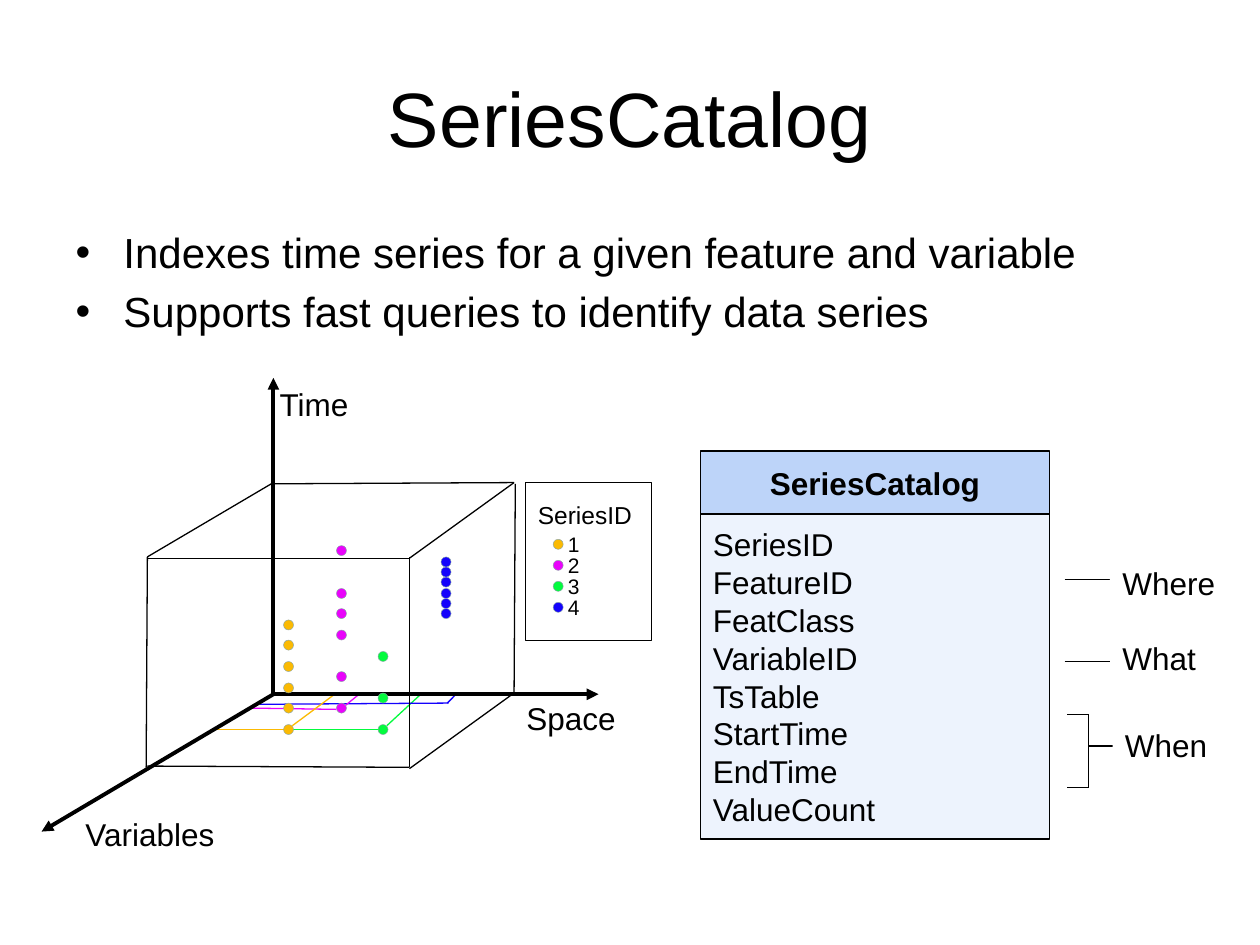
"""Build the SeriesCatalog slide: data cube, series legend and catalog table outline."""
from lxml import etree
from pptx import Presentation
from pptx.dml.color import RGBColor
from pptx.enum.shapes import MSO_CONNECTOR, MSO_SHAPE
from pptx.enum.text import MSO_ANCHOR, MSO_AUTO_SIZE, PP_ALIGN
from pptx.oxml.ns import qn
from pptx.util import Inches, Pt

STRAIGHT = MSO_CONNECTOR.STRAIGHT
OVAL, RECTANGLE, PROCESS = MSO_SHAPE.OVAL, MSO_SHAPE.RECTANGLE, MSO_SHAPE.FLOWCHART_PROCESS
TOP, MIDDLE = MSO_ANCHOR.TOP, MSO_ANCHOR.MIDDLE
LEFT, CENTER = PP_ALIGN.LEFT, PP_ALIGN.CENTER
COLORS = {
    "black": "000000", "white": "FFFFFF", "header": "BDD4F9", "fields": "EDF3FD",
    "orange": "FBBA03", "magenta": "E903FB", "green": "03FB3E", "blue": "1402FC",
    "outline": "8AA6A8",
}
RGB = {name: RGBColor.from_string(value) for name, value in COLORS.items()}
DOT = 0.08


def add_line(start, end, color="black", width=0.75, arrow=False):
    line = page.shapes.add_connector(STRAIGHT, *[Inches(value) for value in (*start, *end)])
    line.line.color.rgb = RGB[color]
    line.line.width = Pt(width)
    if arrow:
        etree.SubElement(line.line._get_or_add_ln(), qn("a:tailEnd"), type="triangle")
    etree.SubElement(line._element.spPr, qn("a:effectLst"))


def write_text(shape, lines, size, align=LEFT, anchor=TOP, wrap=False, bold=False):
    frame = shape.text_frame
    frame.text = "\n".join(lines)
    frame.word_wrap = wrap
    frame.auto_size = MSO_AUTO_SIZE.NONE
    frame.vertical_anchor = anchor
    for para in frame.paragraphs:
        para.alignment = align
        para.font.name = "Arial"
        para.font.size = Pt(size)
        para.font.bold = bold
        para.font.color.rgb = RGB["black"]


deck = Presentation()
deck.slide_width, deck.slide_height = Inches(10), Inches(7.5)
page = deck.slides.add_slide(deck.slide_layouts[1])

title, body = page.placeholders
for box, top, height in [(title, 0.3, 1.25), (body, 1.75, 1.08)]:
    box.left, box.top, box.width, box.height = Inches(0.5), Inches(top), Inches(9), Inches(height)
write_text(title, ["SeriesCatalog"], 44, CENTER, MIDDLE, wrap=True)
write_text(body, [
    "Indexes time series for a given feature and variable",
    "Supports fast queries to identify data series",
], 24, wrap=True)
for para in body.text_frame.paragraphs:
    properties = para._p.get_or_add_pPr()
    properties.set("marL", str(Inches(0.38)))
    properties.set("indent", str(Inches(-0.38)))
    spacing = etree.SubElement(properties, qn("a:spcBef"))
    etree.SubElement(spacing, qn("a:spcPct"), val="20000")
    etree.SubElement(properties, qn("a:buFont"), typeface="Arial")
    etree.SubElement(properties, qn("a:buChar"), char="•")
    properties.insert(0, spacing)

projections = [
    ("green", (3, 5.79), (1.69, 5.79)), ("green", (3.07, 5.76), (3.34, 5.51)),
    ("blue", (3.56, 5.58), (2.06, 5.59)), ("blue", (3.55, 5.58), (3.62, 5.51)),
    ("magenta", (2.74, 5.6), (2.85, 5.51)), ("magenta", (2.67, 5.63), (1.98, 5.62)),
    ("orange", (2.32, 5.76), (2.67, 5.5)), ("orange", (2.25, 5.79), (1.71, 5.79)),
]
for color, start, end in projections:
    add_line(start, end, color)

origin = (2.17, 5.51)
for tip in [(2.17, 3), (0.33, 6.6), (4.75, 5.51)]:
    add_line(origin, tip, width=2.25, arrow=True)

cube_edges = [
    ((1.17, 4.43), (3.25, 4.43)), ((2.17, 3.84), (4.08, 3.83)), ((4.08, 5.5), (3.25, 6.1)),
    ((4.08, 3.83), (3.25, 4.43)), ((3.25, 4.42), (3.25, 6.09)), ((1.17, 4.42), (1.16, 6.09)),
    ((1.17, 6.08), (3.25, 6.09)), ((1.17, 4.42), (2.17, 3.83)), ((4.09, 3.84), (4.08, 5.5)),
]
callout_lines = [
    ((8.45, 4.6), (9.11, 4.6)), ((8.45, 5.25), (9.12, 5.25)), ((8.64, 5.92), (9.12, 5.92)),
    ((8.47, 5.67), (8.64, 5.67)), ((8.47, 6.25), (8.64, 6.25)), ((8.64, 5.67), (8.64, 6.25)),
]
for start, end in cube_edges + callout_lines:
    add_line(start, end)

fields = ["SeriesID", "FeatureID", "FeatClass", "VariableID",
          "TsTable", "StartTime", "EndTime", "ValueCount"]
panels = [
    (PROCESS, 5.56, 3.58, 2.77, 0.5, "header", 0.75, ["SeriesCatalog"], CENTER, True),
    (PROCESS, 5.56, 4.08, 2.77, 2.58, "fields", 0.75, fields, LEFT, False),
    (RECTANGLE, 4.17, 3.83, 1, 1.25, None, 0.25, [], LEFT, False),
]
for kind, left, top, width, height, fill, weight, lines, align, bold in panels:
    panel = page.shapes.add_shape(kind, Inches(left), Inches(top), Inches(width), Inches(height))
    panel.shadow.inherit = False
    panel.line.color.rgb = RGB["black"]
    panel.line.width = Pt(weight)
    if fill:
        panel.fill.solid()
        panel.fill.fore_color.rgb = RGB[fill]
    else:
        panel.fill.background()
    if lines:
        write_text(panel, lines, 18, align, MIDDLE, wrap=True, bold=bold)

labels = [
    ("Time", 2.12, 3.01, 0.75, 0.4, 18, None), ("Space", 4.08, 5.5, 0.92, 0.4, 18, None),
    ("Variables", 0.58, 6.42, 1.23, 0.4, 18, None), ("SeriesID", 4.17, 3.92, 0.95, 0.34, 14, None),
    ("Where", 8.81, 4.43, 0.94, 0.4, 18, "white"), ("What", 8.81, 5.02, 0.79, 0.4, 18, "white"),
    ("When", 8.83, 5.71, 0.86, 0.4, 18, "white"),
]
series = [
    ("orange", 2.25, [5.75, 5.58, 5.42, 5.25, 5.08, 4.92]),
    ("magenta", 2.67, [5.58, 5.33, 5, 4.83, 4.67, 4.33]),
    ("green", 3, [5.75, 5.5, 5.17]),
    ("blue", 3.5, [4.83, 4.75, 4.67, 4.58, 4.5, 4.42]),
]
dots = []
for index, (color, left, tops) in enumerate(series):
    legend_top = 4.17 + index / 6
    labels.append((str(index + 1), 4.41, legend_top, 0.3, 0.3, 12, None))
    dots.append((color, 4.39, legend_top + 0.11))
    dots += [(color, left, top) for top in tops]

for text, left, top, width, height, size, fill in labels:
    label = page.shapes.add_textbox(Inches(left), Inches(top), Inches(width), Inches(height))
    if fill:
        label.fill.solid()
        label.fill.fore_color.rgb = RGB[fill]
    write_text(label, [text], size)

for color, left, top in dots:
    dot = page.shapes.add_shape(OVAL, Inches(left), Inches(top), Inches(DOT), Inches(DOT))
    dot.shadow.inherit = False
    dot.fill.solid()
    dot.fill.fore_color.rgb = RGB[color]
    dot.line.color.rgb = RGB["outline"]
    dot.line.width = Pt(0.25)

deck.save("out.pptx")
